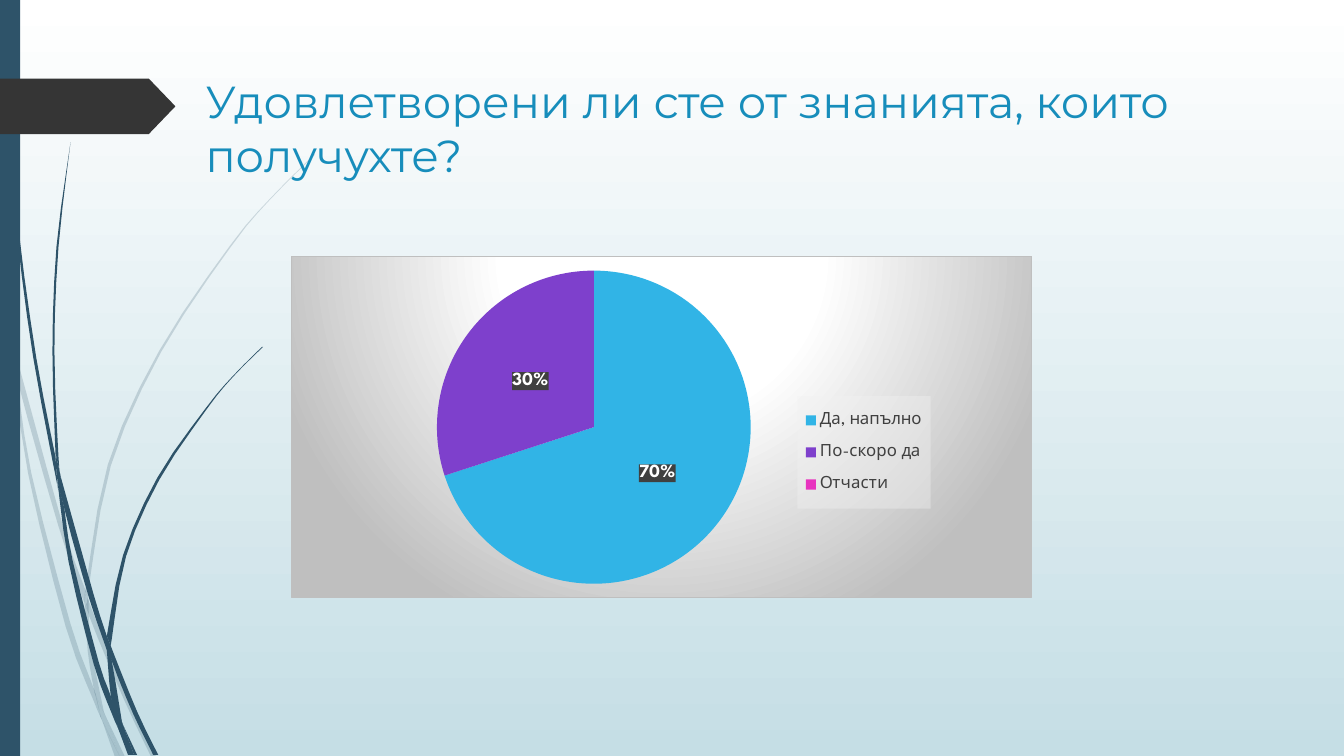
import lxml.etree
import pptx
import pptx.chart.data
import pptx.enum.chart
import pptx.enum.shapes
import pptx.enum.text
import pptx.oxml
import pptx.oxml.ns
import pptx.util
from pptx.dml.color import RGBColor
from pptx.util import Inches

TITLE = "Удовлетворени ли сте от знанията, които получухте?"
ANSWERS = [("Да, напълно", 70), ("По-скоро да", 30), ("Отчасти", None)]

SLICE_COLORS = [RGBColor(0x31, 0xB4, 0xE6), RGBColor(0x7E, 0x40, 0xCC), RGBColor(0xE8, 0x33, 0xBF)]
NAVY = RGBColor(0x2E, 0x53, 0x69)
CHARCOAL = RGBColor(0x35, 0x35, 0x35)
TITLE_BLUE = RGBColor(0x17, 0x8D, 0xBB)
LEGEND_GRAY = RGBColor(0x40, 0x40, 0x40)
WHITE = RGBColor(0xFF, 0xFF, 0xFF)
BLACK = RGBColor(0, 0, 0)
MIST = RGBColor(0xC5, 0xDE, 0xE5)

# Each piece of grass: its two long edges, walked around the outline, in inches
PALE_GRASS = [
    ([(.11, 3.5), (.09, 3.22), (0, 2.82)], [(0, 2.99), (.1, 3.44)]),
    ([(.14, 3.45), (.17, 3.76), (.58, 5.22), (.84, 5.99)], [(.85, 5.86), (.62, 5.2), (.14, 3.45)]),
    ([(.88, 5.96), (.88, 6.1), (1.23, 6.94), (1.5, 7.51)],
     [(1.55, 7.51), (1.27, 6.92), (.92, 6.07)]),
    ([(1.05, 7.11), (1.19, 7.51)], [(1.24, 7.51), (1.05, 7.11)]),
    ([(.11, 3.5), (.28, 4.7), (.65, 6.21), (.92, 6.93), (1.01, 7.14)],
     [(.99, 7.07), (.93, 6.83), (.7, 6.19), (.31, 4.69), (.17, 3.76)]),
    ([(.84, 5.99), (.87, 6.46), (.93, 6.83), (.96, 6.92), (1.05, 7.11)],
     [(1.03, 7.06), (.91, 6.46), (.88, 6.1), (.88, 6.08)]),
    ([(.88, 5.96), (.88, 5.84), (1.1, 4.62), (1.6, 3.49), (2.29, 2.45), (2.68, 1.98), (3.12, 1.54)],
     [(3.12, 1.53), (2.68, 1.97), (2.28, 2.44), (1.58, 3.48), (1.07, 4.61), (.85, 5.84), (.85, 5.86)]),
    ([(1.01, 7.14), (1.14, 7.51)], [(1.19, 7.51), (1.01, 7.14)]),
    ([(.88, 6.1), (.88, 5.96)], [(.85, 5.86), (.84, 5.99), (.88, 6.08)]),
    ([(.93, 6.83), (.99, 7.07), (1.01, 7.14), (1.19, 7.51)], [(1.05, 7.11), (.96, 6.92)]),
]
DARK_GRASS = [
    ([(.03, 0), (.04, .48), (.07, 1.1), (.17, 2.33), (.33, 3.55), (.56, 4.77), (.57, 4.81)],
     [(.55, 4.53), (.36, 3.55), (.19, 2.32), (.08, 1.09), (.05, .48), (.04, 0)]),
    ([(.6, 4.72), (.64, 5.05), (.88, 5.92), (1.06, 6.45)], [(1.06, 6.31), (.93, 5.9), (.6, 4.72)]),
    ([(1.1, 6.41), (1.11, 6.56), (1.32, 7.08), (1.52, 7.49)],
     [(1.57, 7.49), (1.36, 7.06), (1.13, 6.49)]),
    ([(.57, 4.77), (.68, 5.57), (.93, 6.59), (1.11, 7.08), (1.17, 7.22)],
     [(1.16, 7.17), (1.1, 6.91), (.98, 6.57), (.72, 5.56), (.64, 5.05)]),
    ([(.6, 4.72), (.58, 4.53), (.54, 3.49), (.58, 2.45), (.7, 1.41)],
     [(.7, 1.41), (.56, 2.45), (.52, 3.49), (.55, 4.49)]),
    ([(1.22, 7.19), (1.33, 7.49)], [(1.36, 7.49), (1.22, 7.19)]),
    ([(.55, 4.49), (.57, 4.77), (.64, 5.05)], [(.6, 4.72), (.55, 4.49)]),
    ([(1.1, 6.41), (1.11, 6.33), (1.25, 5.52), (1.58, 4.76), (2.05, 4.06), (2.31, 3.74), (2.61, 3.44)],
     [(2.6, 3.44), (2.31, 3.73), (2.04, 4.05), (1.56, 4.74), (1.22, 5.51), (1.06, 6.31)]),
    ([(1.17, 7.22), (1.27, 7.49)], [(1.31, 7.49), (1.17, 7.22)]),
    ([(1.06, 6.45), (1.1, 6.91), (1.16, 7.06), (1.22, 7.19)],
     [(1.21, 7.16), (1.11, 6.56), (1.06, 6.45)]),
    ([(1.06, 6.31), (1.06, 6.45)], [(1.11, 6.56), (1.1, 6.41)]),
    ([(1.1, 6.91), (1.17, 7.22), (1.3, 7.49)], [(1.33, 7.49), (1.22, 7.19), (1.1, 6.91)]),
]

CHART_BOX = (2.89, 2.54, 7.35, 3.39)
PIE_BOX = (4.33, 2.68, 3.12, 3.12)
LEGEND_BOX = (7.91, 3.93, 1.32, 1.12)
CURVE_STEPS = 3
UNITS_PER_INCH = 1000

NAMESPACES = pptx.oxml.ns.nsdecls("c", "a")
CHART_FRAME = f"""<c:spPr {NAMESPACES}><a:gradFill><a:gsLst>
<a:gs pos="0"><a:srgbClr val="FFFFFF"/></a:gs><a:gs pos="39000"><a:srgbClr val="FFFFFF"/></a:gs>
<a:gs pos="100000"><a:srgbClr val="BFBFBF"/></a:gs></a:gsLst>
<a:path path="circle"><a:fillToRect l="50000" t="-80000" r="50000" b="180000"/></a:path></a:gradFill>
<a:ln w="9525"><a:solidFill><a:srgbClr val="BFBFBF"/></a:solidFill></a:ln></c:spPr>"""


def set_alpha(shape, percent):
    color = shape.fill._xPr.find(".//" + pptx.oxml.ns.qn("a:srgbClr"))
    alpha = lxml.etree.SubElement(color, pptx.oxml.ns.qn("a:alpha"))
    alpha.set("val", str(percent * 1000))


def paint(shape, color):
    shape.shadow.inherit = False
    shape.fill.solid()
    shape.fill.fore_color.rgb = color
    shape.line.fill.background()


def smooth(knots):
    """Points of a Catmull-Rom curve through the knots."""
    if len(knots) == 2:
        return knots
    padded = [knots[0], *knots, knots[-1]]
    curve = []
    for corners in zip(padded, padded[1:], padded[2:], padded[3:]):
        for step in range(CURVE_STEPS):
            t = step / CURVE_STEPS
            curve.append(tuple(
                (2 * q + t * (r - p) + t ** 2 * (2 * p - 5 * q + 4 * r - s)
                 + t ** 3 * (3 * q - 3 * r + s - p)) / 2
                for p, q, r, s in zip(*corners)))
    return curve + [knots[-1]]


def add_grass(page, edges):
    outline = [(x * UNITS_PER_INCH, y * UNITS_PER_INCH) for edge in edges for x, y in smooth(edge)]
    builder = page.shapes.build_freeform(*outline[0], scale=Inches(1) / UNITS_PER_INCH)
    builder.add_line_segments(outline[1:], close=True)
    grass = builder.convert_to_shape()
    paint(grass, NAVY)
    return grass


def layout_xml(box, inner=False):
    """Manual chart layout for a box given in slide inches."""
    left, top, width, height = CHART_BOX
    x, y, w, h = box
    target = '<c:layoutTarget val="inner"/>' if inner else ""
    return pptx.oxml.parse_xml(
        f'<c:layout {NAMESPACES}><c:manualLayout>{target}'
        f'<c:xMode val="edge"/><c:yMode val="edge"/>'
        f'<c:x val="{(x - left) / width:.3f}"/><c:y val="{(y - top) / height:.3f}"/>'
        f'<c:w val="{w / width:.3f}"/><c:h val="{h / height:.3f}"/></c:manualLayout></c:layout>')


def solid_xml(color, percent):
    return pptx.oxml.parse_xml(
        f'<c:spPr {NAMESPACES}><a:solidFill><a:srgbClr val="{color}">'
        f'<a:alpha val="{percent * 1000}"/></a:srgbClr></a:solidFill></c:spPr>')


def set_font(font, size, color, name="League Spartan"):
    font.name = name
    font.size = pptx.util.Pt(size)
    font.color.rgb = color


def place_layout(parent, layout, index):
    for old in parent.findall(pptx.oxml.ns.qn("c:layout")):
        parent.remove(old)
    parent.insert(index, layout)


def add_pie(page):
    data = pptx.chart.data.CategoryChartData()
    data.categories = [answer for answer, _ in ANSWERS]
    data.add_series("Series 1", [share for _, share in ANSWERS])
    chart = page.shapes.add_chart(
        pptx.enum.chart.XL_CHART_TYPE.PIE, *map(Inches, CHART_BOX), data).chart
    chart.has_title = False
    set_font(chart.font, 10, BLACK)
    chart_xml = chart._chartSpace.chart
    chart_xml.addnext(pptx.oxml.parse_xml(CHART_FRAME))
    place_layout(chart_xml.plotArea, layout_xml(PIE_BOX, inner=True), 0)

    plot = chart.plots[0]
    plot.vary_by_categories = True
    series = plot.series[0]
    for i, color in enumerate(SLICE_COLORS):
        fill = series.points[i].format.fill
        fill.solid()
        fill.fore_color.rgb = color

    labels = series.data_labels
    labels.show_percentage = True
    labels.show_value = False
    labels.number_format = "0%"
    labels.number_format_is_linked = False
    labels.position = pptx.enum.chart.XL_LABEL_POSITION.CENTER
    set_font(labels.font, 13.3, WHITE)
    labels.font.bold = True
    text_tag = pptx.oxml.ns.qn("c:txPr")
    labels._element.find(text_tag).addprevious(solid_xml("404040", 90))

    chart.has_legend = True
    legend = chart.legend
    legend.position = pptx.enum.chart.XL_LEGEND_POSITION.RIGHT
    legend.include_in_layout = False
    set_font(legend.font, 12, LEGEND_GRAY)
    place_layout(legend._element, layout_xml(LEGEND_BOX), 1)
    legend._element.find(text_tag).addprevious(solid_xml("F2F2F2", 39))


deck = pptx.Presentation()
deck.slide_width, deck.slide_height = Inches(13.33), Inches(7.5)
page = deck.slides.add_slide(deck.slide_layouts[6])
sky = page.background.fill
sky.gradient()
sky.gradient_angle = 270
for position, (stop, color) in enumerate(zip(sky.gradient_stops, (WHITE, MIST))):
    stop.color.rgb = color
    stop.position = position

for edges in PALE_GRASS:
    set_alpha(add_grass(page, edges), 20)
for edges in DARK_GRASS:
    add_grass(page, edges)
kinds = pptx.enum.shapes.MSO_SHAPE
paint(page.shapes.add_shape(kinds.RECTANGLE, 0, 0, Inches(.2), deck.slide_height), NAVY)
tag = page.shapes.add_shape(kinds.PENTAGON, *map(Inches, (0, .78, 1.74, .55)))
tag.adjustments[0] = .48
paint(tag, CHARCOAL)

box = page.shapes.add_textbox(*map(Inches, (1.94, .68, 10.65, 1.4)))
box.text_frame.word_wrap = True
box.text_frame.vertical_anchor = pptx.enum.text.MSO_ANCHOR.TOP
para = box.text_frame.paragraphs[0]
para.text = TITLE
set_font(para.font, 32, TITLE_BLUE, "Montserrat")
add_pie(page)
deck.save("out.pptx")
